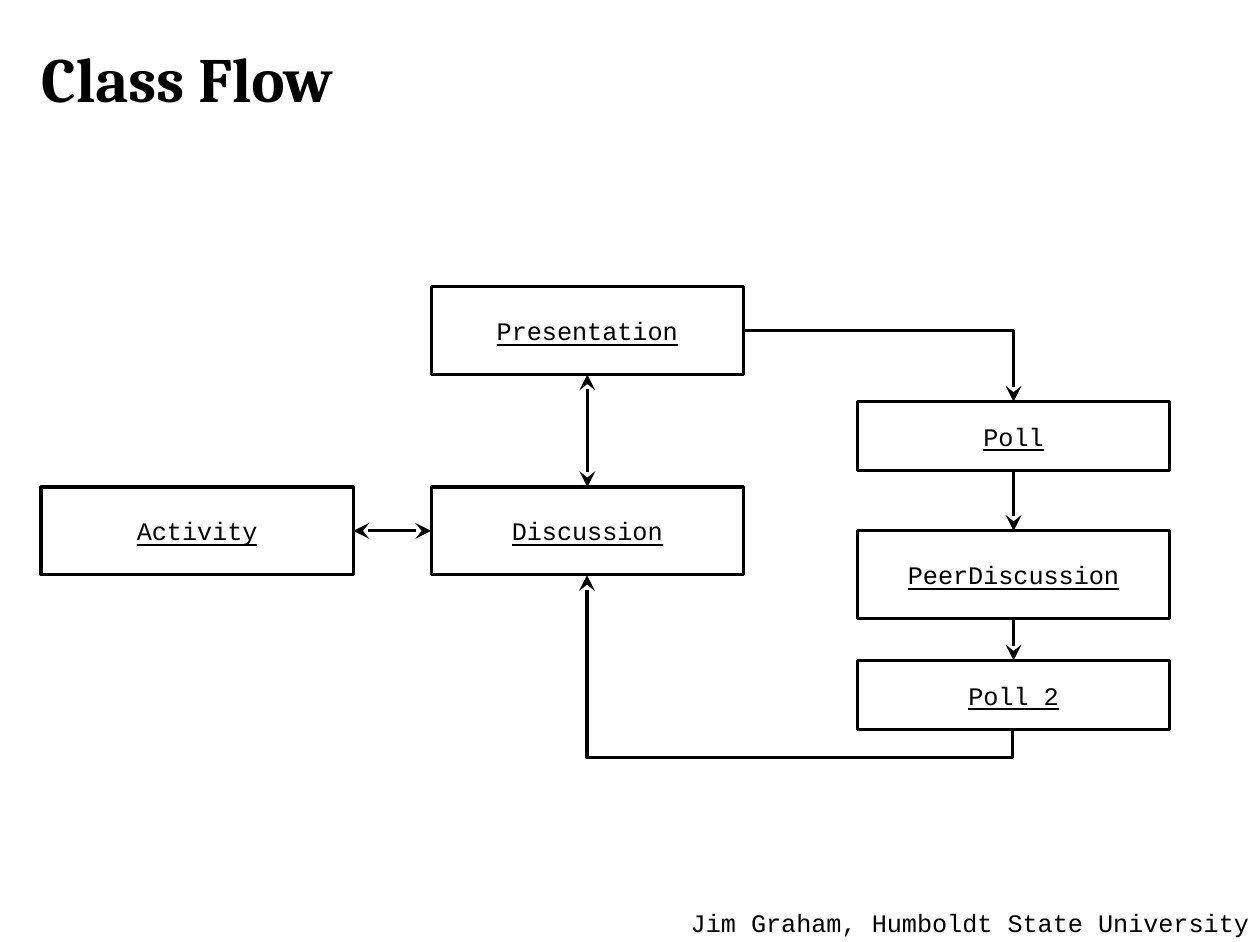
from lxml.etree import SubElement as Sub
from pptx import Presentation as Deck
from pptx.dml.color import RGBColor as Rgb
from pptx.enum.shapes import MSO_CONNECTOR as Link, MSO_SHAPE as Kind
from pptx.enum.text import MSO_ANCHOR as Anchor, PP_ALIGN as Align
from pptx.oxml.ns import qn
from pptx.util import Cm, Pt

INK = "000000"
MONO = {"name": "Courier New", "size": Pt(16), "bold": False}


def style(para, form):
    for key, val in form.items():
        setattr(para.font, key, val)
    para.font.color.rgb = Rgb.from_string(INK)


def draw(kind, ends, tips):
    line = slide.shapes.add_connector(kind, *[Cm(n) for n in ends])
    line.line.width = Pt(2)
    line.line.color.rgb = Rgb.from_string(INK)
    props = line._element.spPr
    for tip in tips:
        Sub(props.find(qn("a:ln")), qn(f"a:{tip}End"), type="stealth", w="lg", len="lg")
    Sub(props, qn("a:effectLst"))
    return line


deck = Deck()
deck.slide_width, deck.slide_height = Cm(28.2), Cm(21.08)
slide = deck.slides.add_slide(deck.slide_layouts[5])

title = slide.shapes.title
title.left, title.top, title.width, title.height = Cm(0.64), Cm(0.43), Cm(22.66), Cm(2.59)
frame = title.text_frame
frame.text = "Class Flow"
frame.vertical_anchor = Anchor.MIDDLE
frame.margin_left = frame.margin_right = Cm(0.28)
frame.margin_top = frame.margin_bottom = Cm(0.15)
frame.paragraphs[0].alignment = Align.LEFT
style(frame.paragraphs[0], {"name": "Cambria", "size": Pt(40), "bold": True})

foot = slide.shapes.add_textbox(Cm(15.21), Cm(20.17), Cm(13.16), Cm(0.97))
foot.text_frame.word_wrap = False
foot.text_frame.text = "Jim Graham, Humboldt State University"
style(foot.text_frame.paragraphs[0], MONO)

WIDE, TALL, LOW = 6.99, 1.96, 1.55
LEFT, MID, RIGHT = 0.92, 9.65, 19.19
steps = [
    ("Presentation", MID, 6.42, TALL),
    ("Discussion", MID, 10.9, TALL),
    ("Activity", LEFT, 10.9, TALL),
    ("Poll", RIGHT, 8.99, LOW),
    ("PeerDiscussion", RIGHT, 11.88, TALL),
    ("Poll 2", RIGHT, 14.78, LOW),
]
boxes = {}
for name, x, y, high in steps:
    box = slide.shapes.add_shape(Kind.RECTANGLE, Cm(x), Cm(y), Cm(WIDE), Cm(high))
    box.shadow.inherit = False
    box.fill.background()
    box.line.width = Pt(2)
    box.line.color.rgb = Rgb.from_string(INK)
    box.text_frame.text = name
    box.text_frame.vertical_anchor = Anchor.MIDDLE
    para = box.text_frame.paragraphs[0]
    para.alignment = Align.CENTER
    style(para, {**MONO, "underline": True})
    boxes[name] = box

TOP, WEST, BASE, EAST = range(4)
links = [
    ("Presentation", BASE, "Discussion", TOP, ["head", "tail"]),
    ("Activity", EAST, "Discussion", WEST, ["head", "tail"]),
    ("Poll", BASE, "PeerDiscussion", TOP, ["tail"]),
    ("PeerDiscussion", BASE, "Poll 2", TOP, ["tail"]),
]
for start, out, end, into, tips in links:
    line = draw(Link.STRAIGHT, (0, 0, 0, 0), tips)
    line.begin_connect(boxes[start], out)
    line.end_connect(boxes[end], into)

turn = draw(Link.ELBOW, (MID + WIDE, 7.4, RIGHT + WIDE / 2, 8.99), ["tail"])
turn._element.spPr.prstGeom.set("prst", "bentConnector2")

back = draw(Link.ELBOW, (19.63, 9.83, 16.18, 19.36), ["tail"])
back._element.spPr.find(qn("a:xfrm")).set("rot", "5400000")
guides = back._element.spPr.prstGeom.get_or_add_avLst()
Sub(guides, qn("a:gd"), name="adj1", fmla="val -18300")

deck.save("out.pptx")
